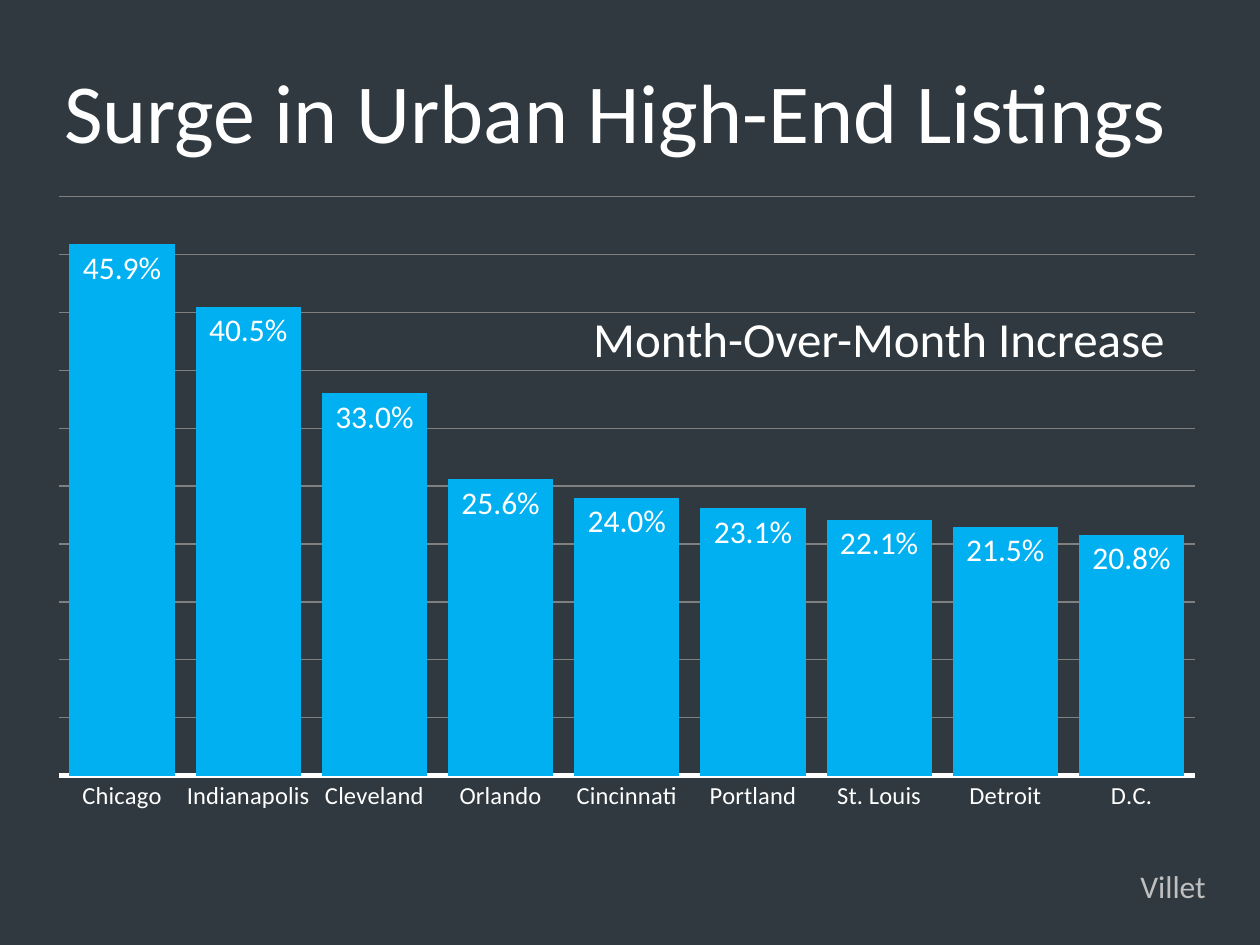
from dataclasses import dataclass

from lxml import etree
from pptx import Presentation
from pptx import util as u
from pptx.chart import data as cd
from pptx.dml.color import RGBColor as Rgb
from pptx.enum import chart as ch, shapes, text
from pptx.oxml.ns import qn


@dataclass(frozen=True)
class Theme:
    font: str = "Calibri"
    back: Rgb = Rgb(0x2F, 0x39, 0x3F)
    bar: Rgb = Rgb(0x00, 0xB0, 0xF0)
    grid: Rgb = Rgb(0x80, 0x80, 0x80)
    note: Rgb = Rgb(0xBF, 0xBF, 0xBF)
    white: Rgb = Rgb(0xFF, 0xFF, 0xFF)
    base: Rgb = Rgb(0, 0, 0)
    head: int = 48
    sub: int = 28
    label: int = 18
    city: int = 14
    small: int = 10


theme = Theme()


def style(font, size, color):
    font.name = theme.font
    font.size = u.Pt(size)
    font.color.rgb = color


def write(box, words, size, color, align, wrap):
    frame = box.text_frame
    frame.text = words
    frame.word_wrap = wrap
    frame.auto_size = text.MSO_AUTO_SIZE.SHAPE_TO_FIT_TEXT
    frame.vertical_anchor = text.MSO_ANCHOR.TOP
    para = frame.paragraphs[0]
    para.alignment = align
    style(para.font, size, color)


deck = Presentation()
deck.slide_width, deck.slide_height = u.Cm(25.4), u.Cm(19.05)
slide = deck.slides.add_slide(deck.slide_layouts[5])
title = slide.shapes.title

# Dark panel behind everything
panel = slide.shapes.add_shape(
    shapes.MSO_SHAPE.RECTANGLE, 0, 0, deck.slide_width, deck.slide_height)
panel.shadow.inherit = False
panel.fill.solid()
panel.fill.fore_color.rgb = theme.back
panel.line.fill.background()
title.element.addprevious(panel.element)

# Column chart
rates = {
    "Chicago": 0.459, "Indianapolis": 0.405, "Cleveland": 0.33,
    "Orlando": 0.256, "Cincinnati": 0.24, "Portland": 0.231,
    "St. Louis": 0.221, "Detroit": 0.215, "D.C.": 0.208,
}
data = cd.CategoryChartData(number_format="0.0%")
data.categories = list(rates)
data.add_series("Series 1", list(rates.values()))
chart = slide.shapes.add_chart(
    ch.XL_CHART_TYPE.COLUMN_CLUSTERED,
    u.Cm(0.74), u.Cm(3.57), u.Cm(23.7), u.Cm(13.59), data).chart
chart.has_title = False
chart.has_legend = False
style(chart.font, theme.small, theme.base)

# Bars and their labels
plot = chart.plots[0]
plot.gap_width = 20
plot.overlap = -27
plot.vary_by_categories = False
bars = plot.series[0]
bars.format.fill.solid()
bars.format.fill.fore_color.rgb = theme.bar
labels = bars.data_labels
labels.show_value = True
labels.position = ch.XL_LABEL_POSITION.INSIDE_END
labels.number_format = "0.0%"
labels.number_format_is_linked = False
style(labels.font, theme.label, theme.white)

# Axes
cities = chart.category_axis
cities.major_tick_mark = ch.XL_TICK_MARK.NONE
cities.format.line.color.rgb = theme.white
cities.format.line.width = u.Pt(3)
style(cities.tick_labels.font, theme.city, theme.white)
scale = chart.value_axis
scale.minimum_scale, scale.maximum_scale, scale.major_unit = 0, 0.5, 0.05
scale.visible = False
scale.has_major_gridlines = True
scale.major_gridlines.format.line.color.rgb = theme.grid
scale.major_gridlines.format.line.width = u.Pt(0.75)

# Fixed inner plot area
area = plot._element.getparent()
for old in area.findall(qn("c:layout")):
    area.remove(old)
layout = etree.Element(qn("c:layout"))
area.insert(0, layout)
manual = etree.SubElement(layout, qn("c:manualLayout"))
for tag, val in (("layoutTarget", "inner"), ("xMode", "edge"),
                 ("yMode", "edge"), ("x", 0.019), ("y", 0.029),
                 ("w", 0.966), ("h", 0.859)):
    etree.SubElement(manual, qn("c:" + tag)).set("val", str(val))

# Title, moved in front of the chart
title.left, title.top = u.Cm(0), u.Cm(1.07)
title.width, title.height = u.Cm(25.2), u.Cm(2.31)
write(title, "Surge in Urban High-End Listings ", theme.head, theme.white,
      text.PP_ALIGN.CENTER, True)
title.element.getparent().append(title.element)

# Subtitle and source
sub = slide.shapes.add_textbox(u.Cm(11.71), u.Cm(6.1), u.Cm(12.19), u.Cm(1.45))
write(sub, "Month-Over-Month Increase", theme.sub, theme.white,
      text.PP_ALIGN.LEFT, False)
source = slide.shapes.add_textbox(
    u.Cm(22.26), u.Cm(17.35), u.Cm(2.3), u.Cm(1.02))
write(source, "Villet", theme.label, theme.note, text.PP_ALIGN.RIGHT, False)

deck.save("out.pptx")
